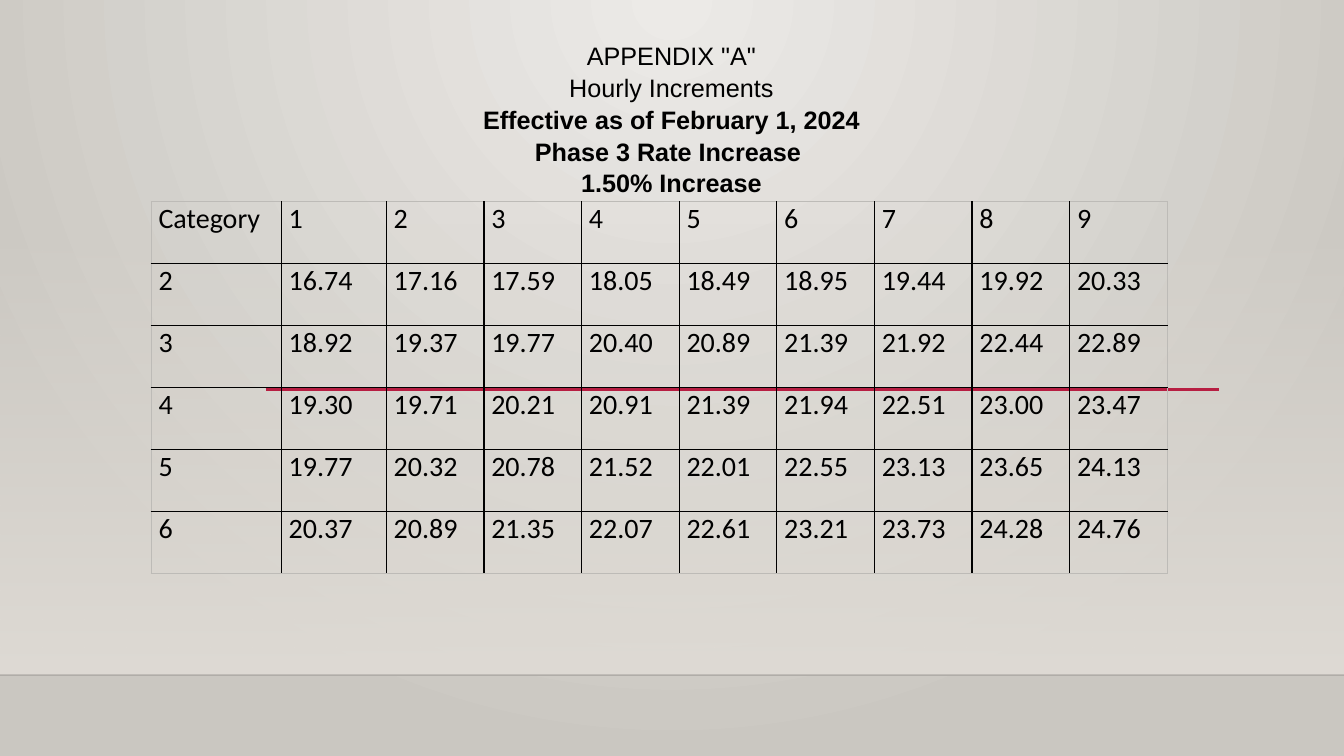
from dataclasses import dataclass

from pptx import Presentation
from pptx import util as u
from pptx.dml.color import RGBColor
from pptx.enum import shapes, text
from pptx.oxml import parse_xml
from pptx.oxml.ns import nsdecls, qn


@dataclass(frozen=True)
class Theme:
    glow: str = "ECEAE7"
    wall: str = "CAC7C1"
    haze: str = "DFDBD5"
    ink: str = "000000"
    accent: str = "B71E42"
    table_edge: str = "BDBBB7"
    title_font: str = "Arial"
    table_font: str = "Calibri"
    title_size: int = 18
    table_size: int = 20


THEME = Theme()
SLIDE_WIDTH, SLIDE_HEIGHT = 1280, 720
FLOOR_TOP = 643

# Each title entry: paragraph text, bold
TITLE = [
    ('APPENDIX "A"', False),
    ("Hourly Increments", False),
    ("Effective as of February 1, 2024", True),
    ("Phase 3 Rate Increase \v1.50% Increase", True),
]
RATES = [
    ["Category", "1", "2", "3", "4", "5", "6", "7", "8", "9"],
    ["2", "16.74", "17.16", "17.59", "18.05", "18.49", "18.95", "19.44", "19.92", "20.33"],
    ["3", "18.92", "19.37", "19.77", "20.40", "20.89", "21.39", "21.92", "22.44", "22.89"],
    ["4", "19.30", "19.71", "20.21", "20.91", "21.39", "21.94", "22.51", "23.00", "23.47"],
    ["5", "19.77", "20.32", "20.78", "21.52", "22.01", "22.55", "23.13", "23.65", "24.13"],
    ["6", "20.37", "20.89", "21.35", "22.07", "22.61", "23.21", "23.73", "24.28", "24.76"],
]
COLUMN_WIDTHS = [124, 100] + [93] * 8


def px(length):
    return u.Emu(length * 9525)


def color(value):
    return RGBColor.from_string(value)


def set_gradient(properties, stops, direction):
    """Replace a solid fill by a gradient of (position, colour, opacity) stops."""
    stop_xml = "".join(
        f'<a:gs pos="{position * 1000}"><a:srgbClr val="{value}">'
        f'<a:alpha val="{opacity * 1000}"/></a:srgbClr></a:gs>'
        for position, value, opacity in stops
    )
    gradient = parse_xml(
        f'<a:gradFill {nsdecls("a")} rotWithShape="1">'
        f"<a:gsLst>{stop_xml}</a:gsLst>{direction}</a:gradFill>"
    )
    properties.replace(properties.find(qn("a:solidFill")), gradient)


def add_line(slide, left, top, width, value, weight, opacity=100):
    line = slide.shapes.add_connector(
        shapes.MSO_CONNECTOR.STRAIGHT, px(left), px(top), px(left + width), px(top)
    )
    line.line.color.rgb = color(value)
    line.line.width = u.Pt(weight)
    properties = line.element.spPr
    properties.append(parse_xml(f'<a:effectLst {nsdecls("a")}/>'))
    if opacity < 100:
        properties.find(".//" + qn("a:srgbClr")).append(
            parse_xml(f'<a:alpha {nsdecls("a")} val="{opacity * 1000}"/>')
        )


def style_font(font, name, size, bold=False):
    font.name = name
    font.size = u.Pt(size)
    font.bold = bold
    font.color.rgb = color(THEME.ink)


def add_backdrop(slide, width, floor_top):
    # Radial glow from the top centre
    slide.background.fill.solid()
    set_gradient(
        slide.element.find(".//" + qn("p:bgPr")),
        [(0, THEME.glow, 100), (100, THEME.wall, 100)],
        '<a:path path="circle"><a:fillToRect l="43000" t="0" r="43000" b="100000"/></a:path>',
    )

    # Haze growing toward the floor
    haze_height = 431
    haze = slide.shapes.add_shape(
        shapes.MSO_SHAPE.RECTANGLE,
        px(0), px(floor_top - haze_height), px(width), px(haze_height),
    )
    haze.shadow.inherit = False
    haze.line.fill.background()
    haze.fill.solid()
    set_gradient(
        haze.element.spPr,
        [(0, THEME.haze, 0), (100, THEME.haze, 100)],
        '<a:lin ang="5400000" scaled="0"/>',
    )

    # Floor edge
    add_line(slide, 0, floor_top, width, THEME.ink, 1, opacity=20)


def add_title(slide, left, top, width, height):
    box = slide.shapes.add_textbox(px(left), px(top), px(width), px(height))
    frame = box.text_frame
    frame.word_wrap = True
    frame.vertical_anchor = text.MSO_ANCHOR.MIDDLE
    for index, (content, bold) in enumerate(TITLE):
        paragraph = frame.add_paragraph() if index else frame.paragraphs[0]
        paragraph.text = content
        paragraph.alignment = text.PP_ALIGN.CENTER
        paragraph.line_spacing = 1.05
        style_font(paragraph.font, THEME.title_font, THEME.title_size, bold)
        for run in paragraph.runs:
            style_font(run.font, THEME.title_font, THEME.title_size, bold)


def set_borders(cell, edges):
    """Draw the four sides; those named in edges lie on the table's outside."""
    properties = cell._tc.get_or_add_tcPr()
    for index, side in enumerate("LRTB"):
        value = THEME.table_edge if side in edges else THEME.ink
        properties.insert(index, parse_xml(
            f'<a:ln{side} {nsdecls("a")} w="12700"><a:solidFill>'
            f'<a:srgbClr val="{value}"/></a:solidFill></a:ln{side}>'
        ))


def add_rate_table(slide, left, top, row_height):
    row_count, column_count = len(RATES), len(COLUMN_WIDTHS)
    table = slide.shapes.add_table(
        row_count, column_count, px(left), px(top),
        px(sum(COLUMN_WIDTHS)), px(row_height * row_count),
    ).table
    table.first_row = table.horz_banding = False
    for column, width in zip(table.columns, COLUMN_WIDTHS):
        column.width = px(width)
    for row_index, values in enumerate(RATES):
        table.rows[row_index].height = px(row_height)
        for column_index, value in enumerate(values):
            cell = table.cell(row_index, column_index)
            cell.fill.background()
            cell.margin_left = cell.margin_right = px(7)
            cell.margin_top = cell.margin_bottom = 0
            cell.text_frame.text = value
            run = cell.text_frame.paragraphs[0].runs[0]
            style_font(run.font, THEME.table_font, THEME.table_size)
            outside = {
                "L": column_index == 0,
                "R": column_index == column_count - 1,
                "T": row_index == 0,
                "B": row_index == row_count - 1,
            }
            set_borders(cell, [side for side, outer in outside.items() if outer])


def main():
    presentation = Presentation()
    presentation.slide_width = px(SLIDE_WIDTH)
    presentation.slide_height = px(SLIDE_HEIGHT)
    slide = presentation.slides.add_slide(presentation.slide_layouts[6])
    add_backdrop(slide, SLIDE_WIDTH, FLOOR_TOP)
    # Accent rule behind the table
    add_line(slide, 253, 371, 908, THEME.accent, 2.5)
    add_title(slide, 44, 34, 1191, 158)
    add_rate_table(slide, 144, 192, 59)
    presentation.save("out.pptx")


if __name__ == "__main__":
    main()
